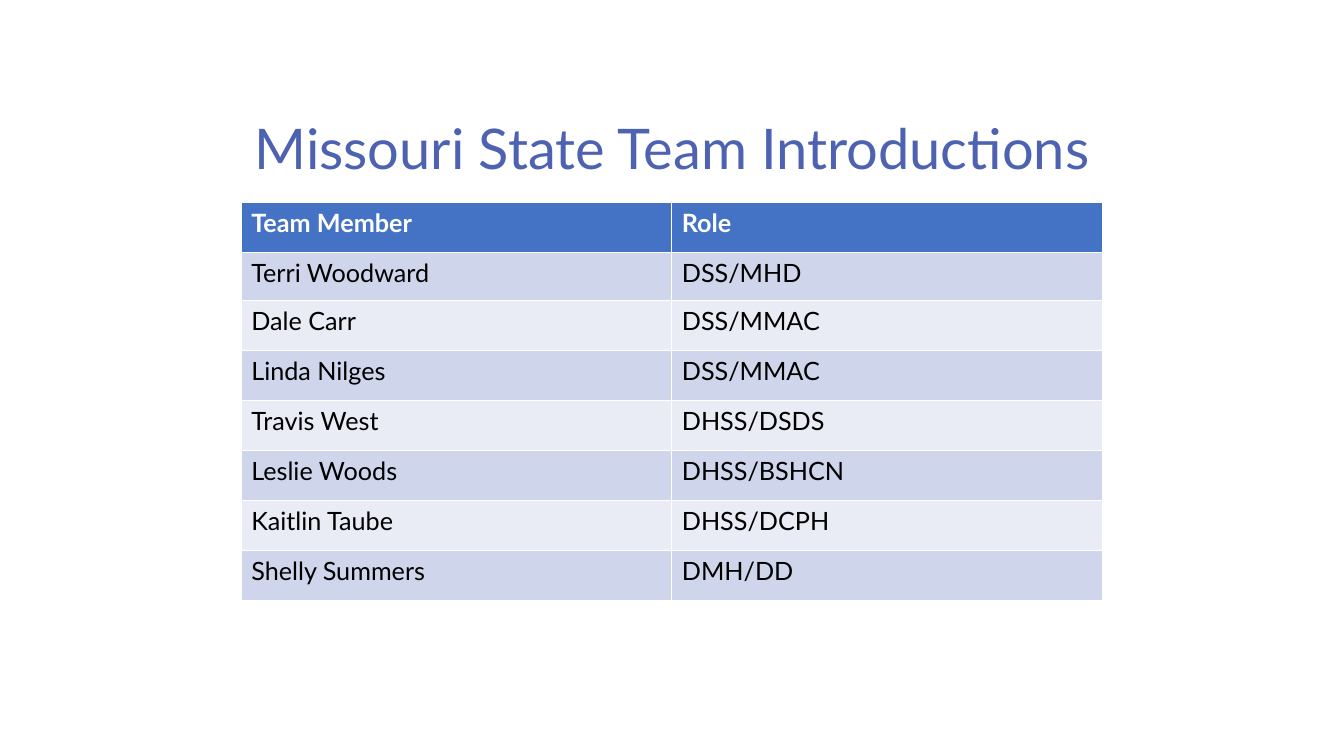
"""Build the Missouri state team introductions slide."""
from dataclasses import dataclass

from pptx import Presentation
from pptx.dml.color import RGBColor
from pptx.enum import text
from pptx.util import Cm, Pt


@dataclass(frozen=True)
class Theme:
    font: str = "Lato"
    title_size: int = 40
    table_size: int = 18
    title: str = "4E62B2"
    header: str = "4472C4"
    header_text: str = "FFFFFF"
    body_text: str = "000000"
    bands: tuple = ("CFD5EA", "E9EBF5")


def write(paragraph, words, size, color, bold=False):
    paragraph.text = words
    font = paragraph.runs[0].font
    for name, value in {"name": theme.font, "size": Pt(size), "bold": bold}.items():
        setattr(font, name, value)
    font.color.rgb = RGBColor.from_string(color)


theme = Theme()
team = [
    ("Team Member", "Role"),
    ("Terri Woodward", "DSS/MHD"),
    ("Dale Carr", "DSS/MMAC"),
    ("Linda Nilges", "DSS/MMAC"),
    ("Travis West", "DHSS/DSDS"),
    ("Leslie Woods", "DHSS/BSHCN"),
    ("Kaitlin Taube", "DHSS/DCPH"),
    ("Shelly Summers", "DMH/DD"),
]
row_heights = [Cm(1.25), Cm(1.22)] + [Cm(1.26)] * (len(team) - 2)

deck = Presentation()
deck.slide_width, deck.slide_height = Cm(33.87), Cm(19.05)
slide = deck.slides.add_slide(deck.slide_layouts[6])

heading = slide.shapes.add_textbox(Cm(2.33), Cm(1.01), Cm(29.21), Cm(3.68)).text_frame
heading.word_wrap = True
heading.vertical_anchor = text.MSO_ANCHOR.BOTTOM
title = heading.paragraphs[0]
title.alignment = text.PP_ALIGN.CENTER
title.line_spacing = 0.9
write(title, "Missouri State Team Introductions", theme.title_size, theme.title)

roster = slide.shapes.add_table(
    len(team), 2, Cm(6.08), Cm(5.11), Cm(21.7), sum(row_heights)
).table
for row_index, (member, height) in enumerate(zip(team, row_heights)):
    roster.rows[row_index].height = height
    is_header = row_index == 0
    fill = theme.header if is_header else theme.bands[(row_index - 1) % 2]
    color = theme.header_text if is_header else theme.body_text
    for column_index, words in enumerate(member):
        cell = roster.cell(row_index, column_index)
        cell.fill.solid()
        cell.fill.fore_color.rgb = RGBColor.from_string(fill)
        write(cell.text_frame.paragraphs[0], words, theme.table_size, color, is_header)

deck.save("out.pptx")
